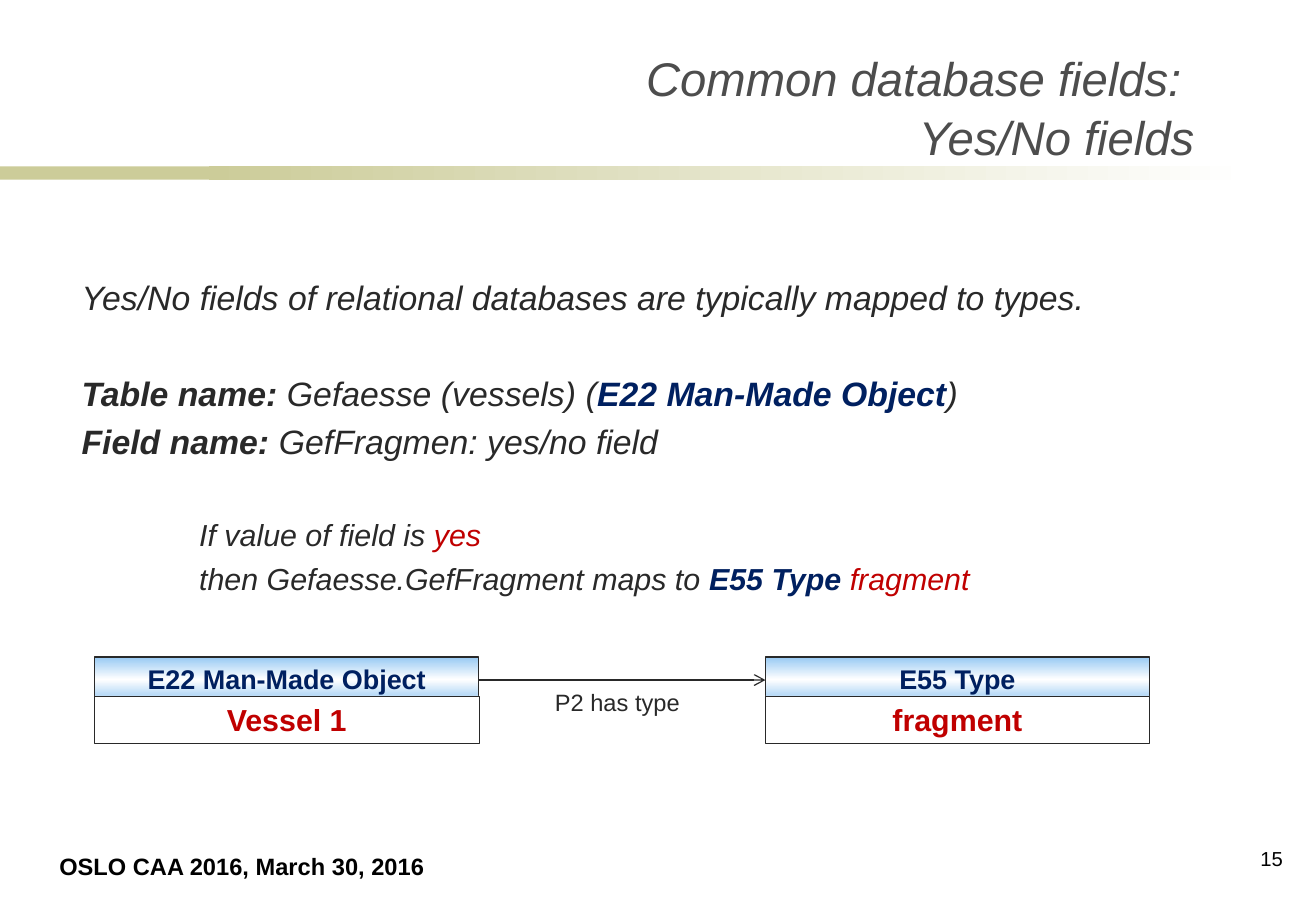
from lxml import etree
from pptx import Presentation
from pptx.dml.color import RGBColor
from pptx.enum.shapes import MSO_CONNECTOR, MSO_SHAPE
from pptx.enum.text import MSO_ANCHOR, MSO_AUTO_SIZE, PP_ALIGN
from pptx.oxml.ns import qn
from pptx.util import Cm, Pt

RECTANGLE = MSO_SHAPE.RECTANGLE
STRAIGHT = MSO_CONNECTOR.STRAIGHT
LEFT, CENTER, RIGHT = PP_ALIGN.LEFT, PP_ALIGN.CENTER, PP_ALIGN.RIGHT
TOP, MIDDLE, BOTTOM = MSO_ANCHOR.TOP, MSO_ANCHOR.MIDDLE, MSO_ANCHOR.BOTTOM
NO_AUTOFIT = MSO_AUTO_SIZE.NONE

COLORS = {
    "ink": "292929", "title": "4D4D4D", "navy": "002060", "red": "C00000",
    "black": "000000", "white": "FFFFFF", "khaki": "CCCC99", "sky": "97C9F3",
}
FORMATS = {
    "title": {"size": Pt(28), "italic": True},
    "body": {"size": Pt(20), "italic": True, "bold": False},
    "body_strong": {"size": Pt(20), "italic": True, "bold": True},
    "rule": {"size": Pt(18), "italic": True, "bold": False},
    "rule_strong": {"size": Pt(18), "italic": True, "bold": True},
    "class": {"size": Pt(16), "bold": True},
    "instance": {"size": Pt(18), "bold": True},
    "property": {"size": Pt(14)},
    "footer": {"size": Pt(14), "bold": True},
    "number": {"size": Pt(12)},
}
BODY = [
    (0, 0, [("Yes/No fields of relational databases are typically mapped to types.", "body", "ink")]),
    (0, 32.6, [("Table name: ", "body_strong", "ink"),
               ("Gefaesse (vessels) (", "body", "ink"),
               ("E22 Man-Made Object", "body_strong", "navy"),
               (")", "body", "ink")]),
    (0, 4.8, [("Field name: ", "body_strong", "ink"),
              ("GefFragmen: yes/no field", "body", "ink")]),
    (1, 32.6, [("If value of field is ", "rule", "ink"), ("yes", "rule", "red")]),
    (1, 4.2, [("then Gefaesse.GefFragment maps to ", "rule", "ink"),
              ("E55 Type ", "rule_strong", "navy"),
              ("fragment", "rule", "red")]),
]


def rgb(name):
    return RGBColor.from_string(COLORS[name])


def set_values(target, values):
    for name, value in values.items():
        setattr(target, name, value)


def add_run(paragraph, text, style, color):
    run = paragraph.add_run()
    run.text = text
    set_values(run.font, {"name": "Arial", **FORMATS[style]})
    run.font.color.rgb = rgb(color)


def set_text(shape, text, style, color, align=LEFT, anchor=TOP, wrap=True):
    frame = shape.text_frame
    set_values(frame, {"word_wrap": wrap, "auto_size": NO_AUTOFIT, "vertical_anchor": anchor})
    paragraph = frame.paragraphs[0]
    paragraph.alignment = align
    add_run(paragraph, text, style, color)


def add_label(slide, box, *text, **layout):
    set_text(slide.shapes.add_textbox(*map(Cm, box)), *text, **layout)


def add_rectangle(slide, box, colors, angle=0, line_width=0):
    shape = slide.shapes.add_shape(RECTANGLE, *map(Cm, box))
    shape.shadow.inherit = False
    if len(colors) == 1:
        shape.fill.solid()
        shape.fill.fore_color.rgb = rgb(colors[0])
    else:
        shape.fill.gradient()
        shape.fill.gradient_angle = angle
        stops = shape._element.spPr.find(qn("a:gradFill")).find(qn("a:gsLst"))
        stops.clear()
        for index, color in enumerate(colors):
            position = str(100000 * index // (len(colors) - 1))
            stop = etree.SubElement(stops, qn("a:gs"), pos=position)
            etree.SubElement(stop, qn("a:srgbClr"), val=COLORS[color])
    if line_width:
        shape.line.color.rgb = rgb("ink")
        shape.line.width = Pt(line_width)
    else:
        shape.line.fill.background()
    return shape


def place(shape, box):
    set_values(shape, dict(zip(("left", "top", "width", "height"), map(Cm, box))))


def add_header_band(slide, left, top, width, height):
    add_rectangle(slide, (left, top, 6.43, height), ["khaki"])
    add_rectangle(slide, (left + 4.37, top, width - 4.37, height), ["khaki", "white"])


def fill_title(slide, box):
    title = slide.shapes.title
    place(title, box)
    set_text(title, "Common database fields: ", "title", "title", RIGHT, BOTTOM)
    paragraph = title.text_frame.add_paragraph()
    set_values(paragraph, {"alignment": RIGHT, "space_before": Pt(1.6)})
    add_run(paragraph, "Yes/No fields", "title", "title")


def fill_body(slide, box):
    body = slide.placeholders[1]
    place(body, box)
    frame = body.text_frame
    set_values(frame, {"auto_size": NO_AUTOFIT, "vertical_anchor": TOP})
    for index, (level, space, runs) in enumerate(BODY):
        paragraph = frame.add_paragraph() if index else frame.paragraphs[0]
        set_values(paragraph, {"level": level, "space_before": Pt(space), "alignment": LEFT})
        properties = paragraph._p.get_or_add_pPr()
        properties.set("marL", str(Cm(2.46) * level))
        properties.set("indent", "0")
        etree.SubElement(properties, qn("a:buNone"))
        for run in runs:
            add_run(paragraph, *run)


def add_entity(slide, left, top, width, class_name, instance):
    header = add_rectangle(slide, (left, top, width, 0.94), ["sky", "white", "sky"], 90, 0.75)
    set_text(header, class_name, "class", "navy", CENTER)
    value = add_rectangle(slide, (left, top + 0.81, width, 0.99), ["white"], line_width=0.25)
    set_text(value, instance, "instance", "red", CENTER, MIDDLE)


def add_mapping(slide, left, top, width):
    entity_width = 8.03
    target_left = left + width - entity_width
    add_entity(slide, left, top, entity_width, "E22 Man-Made Object", "Vessel 1")
    add_entity(slide, target_left, top, entity_width, "E55 Type", "fragment")
    arrow_top = Cm(top + 0.48)
    arrow = slide.shapes.add_connector(
        STRAIGHT, Cm(left + entity_width), arrow_top, Cm(target_left), arrow_top)
    arrow.line.color.rgb = rgb("ink")
    arrow.line.width = Pt(0.75)
    etree.SubElement(arrow.line._get_or_add_ln(), qn("a:tailEnd"), type="arrow")
    etree.SubElement(arrow._element.spPr, qn("a:effectLst"))
    add_label(slide, (left + 9.37, top + 0.53, 3.28, 0.86),
              "P2 has type", "property", "ink", wrap=False)


def add_footer(slide, left, top, width):
    add_label(slide, (left, top + 0.12, 8.18, 0.86),
              "OSLO CAA 2016, March 30, 2016", "footer", "black", wrap=False)
    add_label(slide, (left + width - 1.24, top, 1.24, 1.07),
              "15", "number", "black", align=RIGHT)


def main():
    presentation = Presentation()
    set_values(presentation, {"slide_width": Cm(27.51), "slide_height": Cm(19.05)})
    slide = presentation.slides.add_slide(presentation.slide_layouts[1])
    add_header_band(slide, 0, 3.48, 26.16, 0.28)
    fill_title(slide, (5.36, 0.33, 19.86, 3.25))
    fill_body(slide, (1.45, 5.66, 25.32, 7.5))
    add_mapping(slide, 1.98, 13.74, 22.05)
    add_footer(slide, 0.99, 17.58, 26.08)
    presentation.save("out.pptx")


if __name__ == "__main__":
    main()
